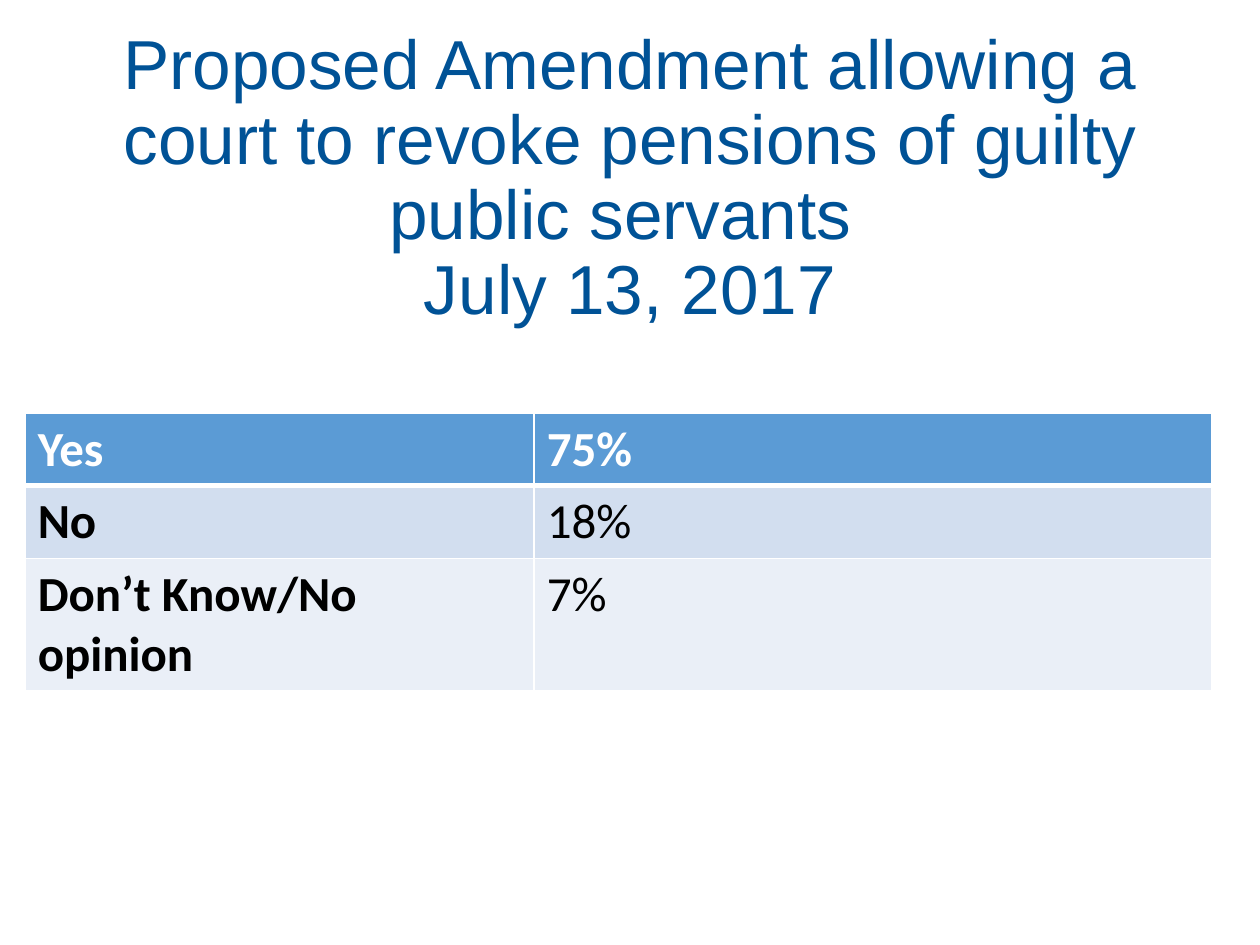
"""Build a slide with poll results on a proposed pension amendment."""
import copy

import pptx
import pptx.dml.color
import pptx.enum.text
import pptx.oxml
import pptx.oxml.ns
import pptx.util

Inches = pptx.util.Inches
Pt = pptx.util.Pt


def color(value):
    """Return the RGB colour for a hex string."""
    return pptx.dml.color.RGBColor.from_string(value)


def add_border(cell, side, width):
    """Draw a white border on one side of a cell."""
    namespace = pptx.oxml.ns.nsdecls("a")
    cell._tc.get_or_add_tcPr().append(pptx.oxml.parse_xml(
        f'<a:{side} {namespace} w="{Pt(width)}"><a:solidFill>'
        f'<a:srgbClr val="FFFFFF"/></a:solidFill></a:{side}>'))


presentation = pptx.Presentation()
presentation.slide_width = Inches(10)
presentation.slide_height = Inches(7.5)
slide = presentation.slides.add_slide(presentation.slide_layouts[5])

question = slide.shapes.title
placement = {"left": 0.69, "top": 0.14, "width": 8.62, "height": 2.57}
for name, value in placement.items():
    setattr(question, name, Inches(value))
frame = question.text_frame
frame.text = ("Proposed Amendment allowing a court to revoke pensions "
              "of guilty public servants \vJuly 13, 2017")
frame.word_wrap = True
frame.auto_size = pptx.enum.text.MSO_AUTO_SIZE.NONE
frame.vertical_anchor = pptx.enum.text.MSO_ANCHOR.MIDDLE
heading = frame.paragraphs[0]
heading.alignment = pptx.enum.text.PP_ALIGN.CENTER
heading.line_spacing = 0.9
for run in heading.runs:
    for name, value in {"name": "Arial", "size": Pt(39.6)}.items():
        setattr(run.font, name, value)
    run.font.color.rgb = color("005296")
line_break = heading._p.find(pptx.oxml.ns.qn("a:br"))
line_break.insert(0, copy.deepcopy(heading.runs[0]._r.rPr))

answers = [("Yes", "75%"), ("No", "18%"), ("Don’t Know/No opinion", "7%")]
row_styles = [(0.57, "5B9BD5", "FFFFFF"), (0.57, "D2DEEF", "000000"),
              (1.03, "EAEFF7", "000000")]
results = slide.shapes.add_table(
    3, 2, Inches(0.2), Inches(3.28), Inches(9.42), Inches(2.17)).table
for column, width in zip(results.columns, (4.04, 5.38)):
    column.width = Inches(width)

for row, (answer, (height, fill, ink)) in enumerate(zip(answers, row_styles)):
    results.rows[row].height = Inches(height)
    for column, wording in enumerate(answer):
        cell = results.cell(row, column)
        cell.text = wording
        font = cell.text_frame.paragraphs[0].runs[0].font
        style = {"name": "Calibri", "size": Pt(28),
                 "bold": row == 0 or column == 0}
        for name, value in style.items():
            setattr(font, name, value)
        font.color.rgb = color(ink)
        borders = {"lnL": 1, "lnR": 1, "lnT": 3 if row == 1 else 1,
                   "lnB": 3 if row == 0 else 1}
        for side, width in borders.items():
            add_border(cell, side, width)
        cell.fill.solid()
        cell.fill.fore_color.rgb = color(fill)

presentation.save("out.pptx")
